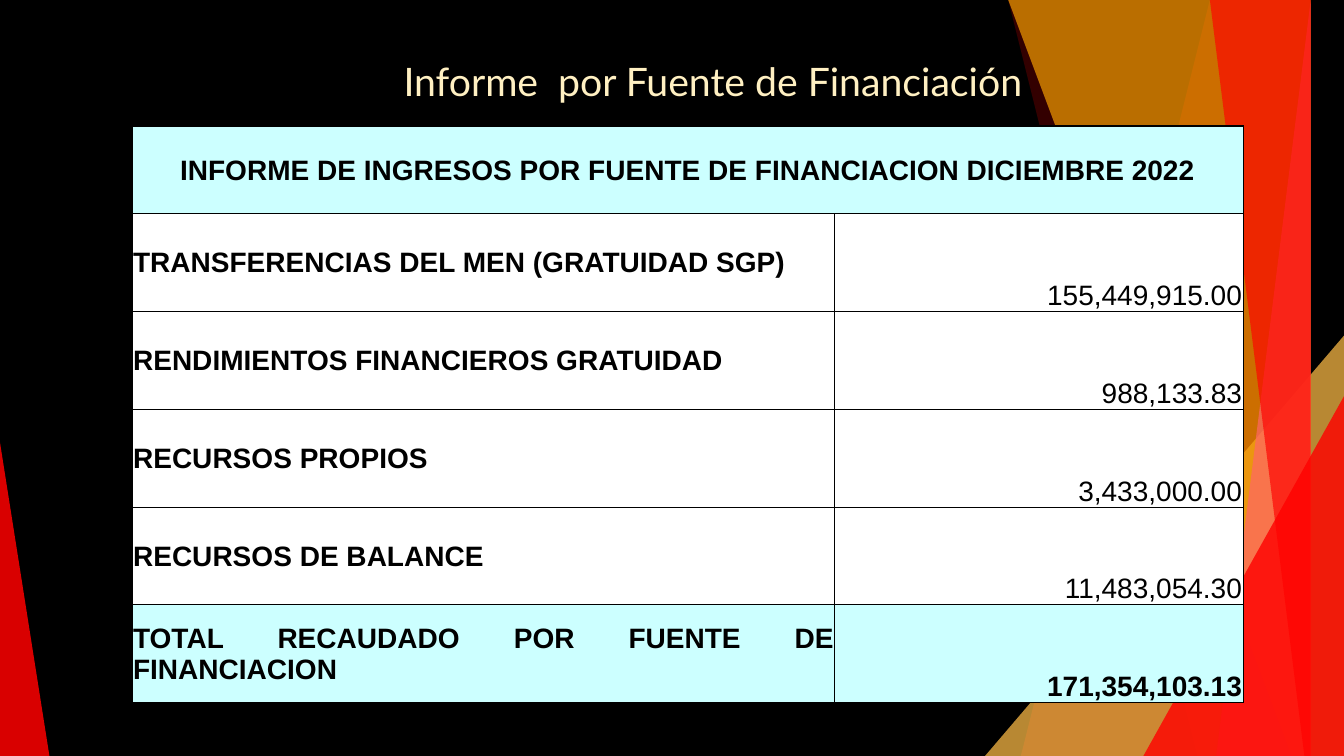
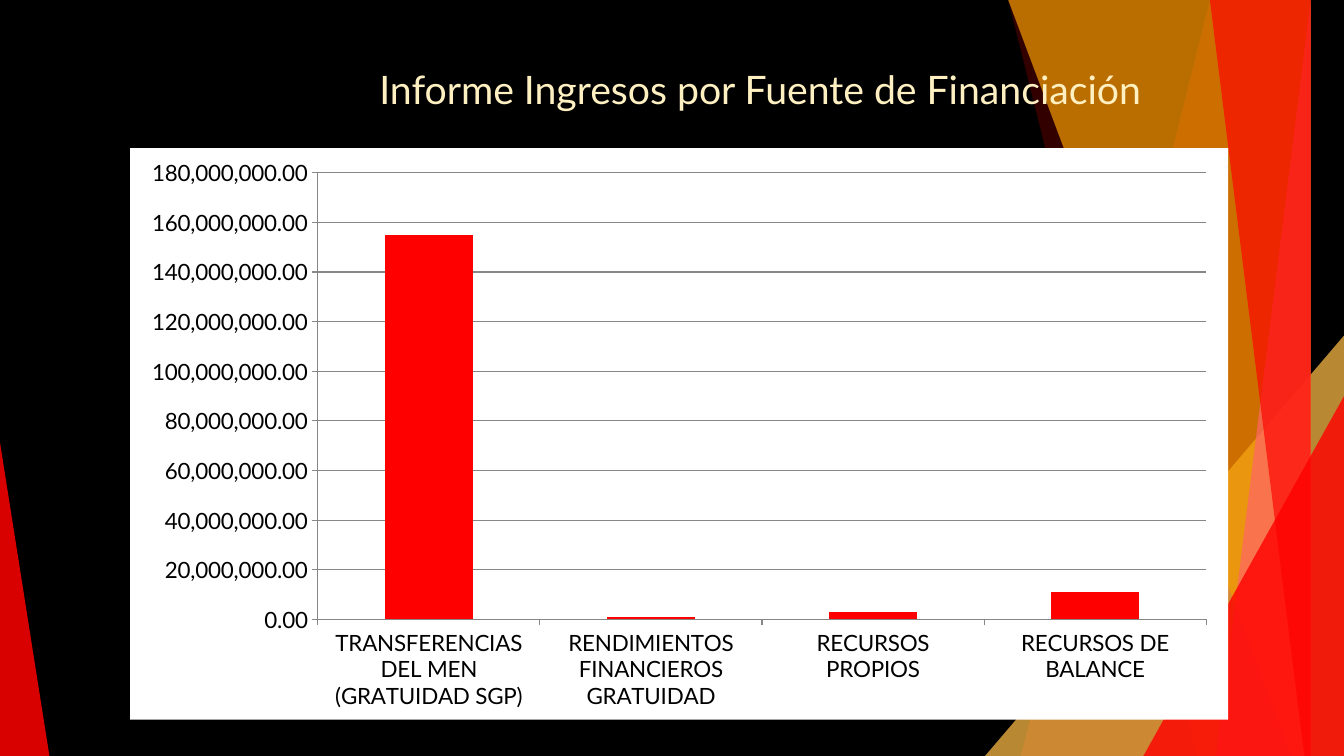
from lxml import etree
from pptx import Presentation
from pptx.chart.data import CategoryChartData
from pptx.dml.color import RGBColor
from pptx.enum.chart import XL_CHART_TYPE as CHART, XL_TICK_MARK as TICK
from pptx.enum.shapes import MSO_SHAPE as SHAPE
from pptx.enum.text import MSO_ANCHOR as ANCHOR, PP_ALIGN as ALIGN
from pptx.oxml import parse_xml
from pptx.oxml.ns import nsdecls, qn
from pptx.util import Inches, Pt

# Shared look
WIDTH, HEIGHT = 13.33, 7.5
BLACK = RGBColor(0x00, 0x00, 0x00)
WHITE = RGBColor(0xFF, 0xFF, 0xFF)
RED = RGBColor(0xFF, 0x00, 0x00)
PINK = RGBColor(0xFF, 0x66, 0x66)
AMBER = RGBColor(0xFF, 0xBD, 0x47)
ORANGE = RGBColor(0xF4, 0x9D, 0x00)
CREAM = RGBColor(0xFF, 0xF0, 0xC2)
CYAN = RGBColor(0xCC, 0xFF, 0xFF)
GREY = RGBColor(0x87, 0x87, 0x87)

TITLE_FONT = {"name": "Lato", "size": Pt(28), "bold": False}
CELL_FONT = {"name": "Arial", "size": Pt(20)}
CHART_FONT = {"name": "Lato", "size": Pt(16), "bold": False}
CELL_MARGINS = {"margin_left": Inches(0.01), "margin_right": Inches(0.01),
                "margin_top": Inches(0.01), "margin_bottom": 0}

# Content
HEADING = "INFORME DE INGRESOS POR FUENTE DE FINANCIACION DICIEMBRE 2022"
SOURCES = ["TRANSFERENCIAS DEL MEN (GRATUIDAD SGP)",
           "RENDIMIENTOS FINANCIEROS GRATUIDAD",
           "RECURSOS PROPIOS",
           "RECURSOS DE BALANCE"]
AMOUNTS = ["155,449,915.00", "988,133.83", "3,433,000.00", "11,483,054.30"]
TOTAL = ("TOTAL RECAUDADO POR FUENTE DE FINANCIACION", "171,354,103.13")
CHART_VALUES = [155000000, 1000000, 3000000, 11000000]


def set_values(target, values):
    for name, value in values.items():
        setattr(target, name, value)


def style_font(font, values, color):
    set_values(font, values)
    font.color.rgb = color


# Background panes
def paint(sp, color, opacity):
    sp.shadow.inherit = False
    sp.line.fill.background()
    sp.fill.solid()
    sp.fill.fore_color.rgb = color
    clr = sp.fill._xPr.find(qn("a:solidFill"))[0]
    etree.SubElement(clr, qn("a:alpha")).set("val", str(opacity * 1000))


def add_pane(slide, top_x, bottom_x):
    """Pane from a slanted left edge to the right side of the slide."""
    builder = slide.shapes.build_freeform(top_x, 0, scale=Inches(1))
    builder.add_line_segments([(WIDTH, 0), (WIDTH, HEIGHT), (bottom_x, HEIGHT)])
    return builder.convert_to_shape()


def add_corner(slide, left, top, width, apex):
    """Triangle standing on the bottom edge of the slide."""
    sp = slide.shapes.add_shape(SHAPE.ISOSCELES_TRIANGLE, Inches(left), Inches(top),
                                Inches(width), Inches(HEIGHT - top))
    sp.adjustments[0] = apex
    return sp


BACKDROP = [
    (add_pane, (12.28, 10.04), RED, 30),
    (add_pane, (10.5, 11.83), RED, 20),
    (add_corner, (9.77, 3.33, 3.56, 1), AMBER, 72),
    (add_pane, (10.21, 12.91), ORANGE, 70),
    (add_pane, (13.03, 11.92), PINK, 70),
    (add_pane, (11.96, 13.18), RED, 65),
    (add_corner, (11.34, 3.93, 1.99, 1), RED, 80),
    (add_corner, (0, 4.39, 0.49, 0), RED, 85),
]


def add_slide(prs, title, left, top):
    slide = prs.slides.add_slide(prs.slide_layouts[6])
    slide.background.fill.solid()
    slide.background.fill.fore_color.rgb = BLACK
    for draw, geometry, color, opacity in BACKDROP:
        paint(draw(slide, *geometry), color, opacity)
    # Title
    tf = slide.shapes.add_textbox(Inches(left), Inches(top), Inches(9), Inches(1.18)).text_frame
    tf.word_wrap = True
    p = tf.paragraphs[0]
    p.alignment = ALIGN.CENTER
    r = p.add_run()
    r.text = title
    style_font(r.font, TITLE_FONT, CREAM)
    return slide


# Table
def set_borders(cell, widths):
    tc_pr = cell._tc.get_or_add_tcPr()
    for side, width in widths.items():
        tc_pr.append(parse_xml(
            f'<a:ln{side} {nsdecls("a")} w="{Pt(width)}"><a:solidFill>'
            f'<a:srgbClr val="{BLACK}"/></a:solidFill></a:ln{side}>'))


def fill_cell(cell, text, fill, align, anchor, bold):
    set_values(cell, CELL_MARGINS)
    cell.vertical_anchor = anchor
    cell.fill.solid()
    cell.fill.fore_color.rgb = fill
    p = cell.text_frame.paragraphs[0]
    p.alignment = align
    if text:
        r = p.add_run()
        r.text = text
        style_font(r.font, {**CELL_FONT, "bold": bold}, BLACK)


def add_income_table(slide):
    rows = [(HEADING, ""), *zip(SOURCES, AMOUNTS), TOTAL]
    last = len(rows) - 1
    table = slide.shapes.add_table(len(rows), 2, Inches(1.31), Inches(1.25),
                                   Inches(11.02), Inches(5.72)).table
    for column, width in zip(table.columns, (6.97, 4.05)):
        column.width = Inches(width)
    for i, texts in enumerate(rows):
        table.rows[i].height = Inches(0.97 if i else 0.87)
        fill = CYAN if i in (0, last) else WHITE
        label_align = {0: ALIGN.CENTER, last: ALIGN.JUSTIFY}.get(i, ALIGN.LEFT)
        for j, text in enumerate(texts):
            cell = table.cell(i, j)
            set_borders(cell, {"L": 0.5 if j else 1, "R": 1 if j else 0.5,
                               "T": 1 if i < 2 else 0.5,
                               "B": 1 if i in (0, last) else 0.5})
            if j == 0:
                fill_cell(cell, text, fill, label_align, ANCHOR.MIDDLE, True)
            else:
                fill_cell(cell, text, fill, ALIGN.RIGHT, ANCHOR.BOTTOM, i == last)
    table.cell(0, 0).merge(table.cell(0, 1))


# Chart
def add_income_chart(slide):
    data = CategoryChartData(number_format="#,##0.00")
    data.categories = SOURCES
    data.add_series("Series 1", CHART_VALUES)
    chart = slide.shapes.add_chart(CHART.COLUMN_CLUSTERED, Inches(1.29), Inches(1.47),
                                   Inches(10.89), Inches(5.67), data).chart
    set_values(chart, {"has_legend": False, "has_title": False})
    style_font(chart.font, CHART_FONT, BLACK)
    chart._chartSpace.find(qn("c:txPr")).addprevious(parse_xml(
        f'<c:spPr {nsdecls("c", "a")}><a:solidFill><a:srgbClr val="{WHITE}"/>'
        '</a:solidFill><a:ln><a:noFill/></a:ln></c:spPr>'))
    # Columns
    plot = chart.plots[0]
    set_values(plot, {"gap_width": 150, "vary_by_categories": False})
    fill = plot.series[0].format.fill
    fill.solid()
    fill.fore_color.rgb = RED
    # Axes
    values = chart.value_axis
    set_values(values, {"minimum_scale": 0, "maximum_scale": 180000000,
                        "major_unit": 20000000, "has_major_gridlines": True})
    set_values(values.tick_labels, {"number_format": "#,##0.00",
                                    "number_format_is_linked": False})
    for axis in (values, chart.category_axis):
        axis.major_tick_mark = TICK.OUTSIDE
        style_font(axis.tick_labels.font, CHART_FONT, BLACK)
    for part in (values, chart.category_axis, values.major_gridlines):
        part.format.line.color.rgb = GREY
        part.format.line.width = Pt(0.75)


def main():
    prs = Presentation()
    prs.slide_width, prs.slide_height = Inches(WIDTH), Inches(HEIGHT)
    add_income_table(add_slide(prs, "Informe  por Fuente de Financiación", 2.57, 0.52))
    add_income_chart(add_slide(prs, "Informe Ingresos por Fuente de Financiación", 3.04, 0.6))
    prs.save("out.pptx")


if __name__ == "__main__":
    main()
